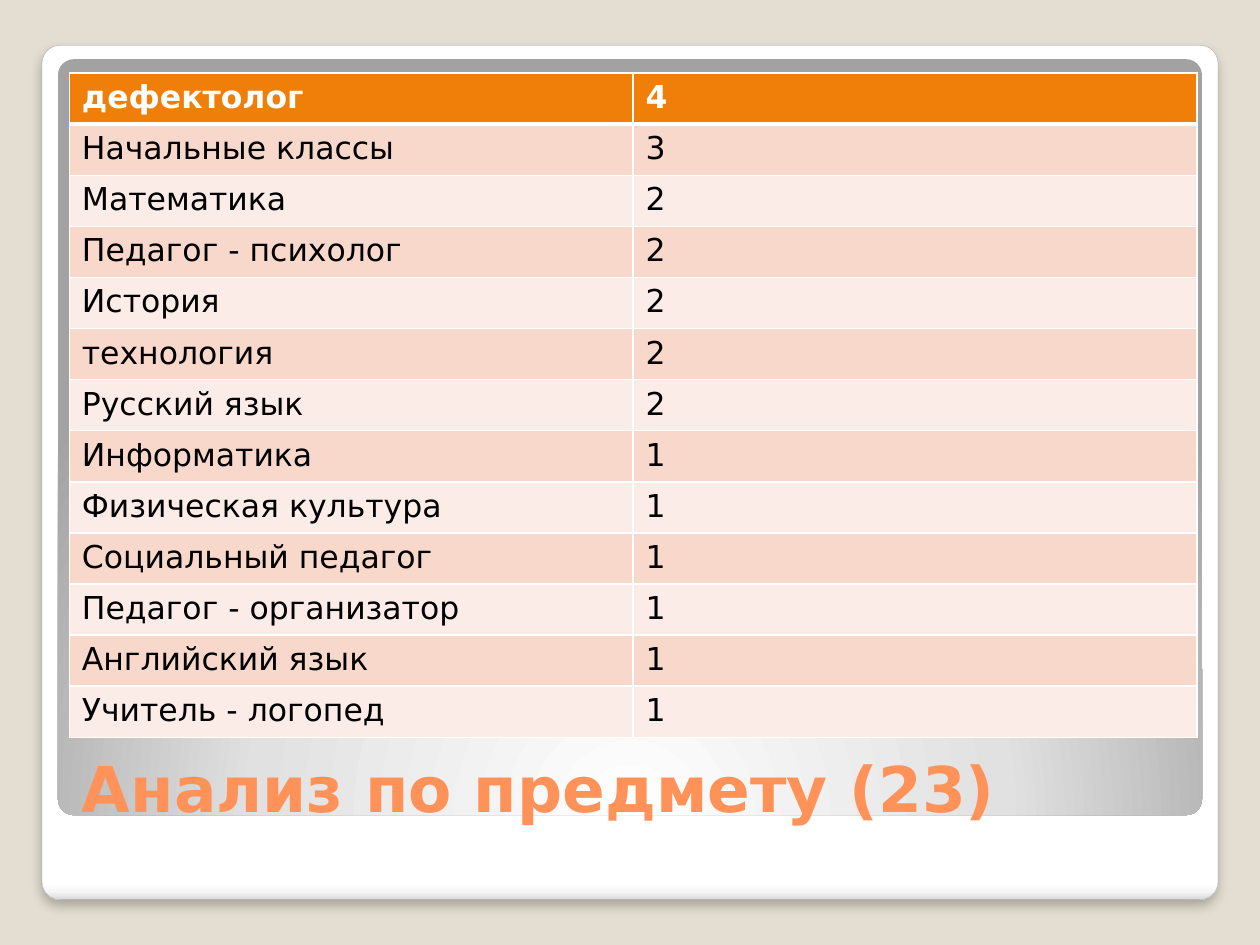
"""Build the slide that counts teachers by subject."""
from lxml import etree
from pptx import Presentation
from pptx.dml.color import RGBColor
from pptx.enum import shapes, text
from pptx.oxml import ns
from pptx.util import Pt

TITLE = "Анализ по предмету (23)"
ROWS = [
    ("дефектолог", 4),
    ("Начальные классы", 3),
    ("Математика", 2),
    ("Педагог - психолог", 2),
    ("История", 2),
    ("технология", 2),
    ("Русский язык", 2),
    ("Информатика", 1),
    ("Физическая культура", 1),
    ("Социальный педагог", 1),
    ("Педагог - организатор", 1),
    ("Английский язык", 1),
    ("Учитель - логопед", 1),
]
FONT = "DejaVu Sans"
HUES = {
    "back": "E3DED1", "edge": "A4A4A4", "title": "FF9258", "head": "F07F09",
    "odd": "F9D8CC", "even": "FCECE7", "white": "FFFFFF", "black": "000000",
}
CARD = [(0, "FFFFFF"), (98, "FFFFFF"), (99, "F7F7F7"), (100, "DADADA")]
PANEL = [(0, "FFFFFF"), (55, "E1E1E1"), (100, "A2A2A2")]
LEFT, WIDE, TOP, HIGH = 39.6, 644.4, 41.76, 29.2


def hue(name):
    return RGBColor.from_string(HUES[name])


def add(root, tag, **attrs):
    node = etree.SubElement(root, ns.qn("a:" + tag))
    for key, val in attrs.items():
        node.set(key, str(val))
    return node


def write(frame, words, size, name, bold):
    run = frame.paragraphs[0].add_run()
    run.text = str(words)
    run.font.name, run.font.size, run.font.bold = FONT, Pt(size), bold
    run.font.color.rgb = hue(name)


def plate(slide, box, stops):
    shape = slide.shapes.add_shape(
        shapes.MSO_SHAPE.ROUNDED_RECTANGLE, *map(Pt, box))
    shape.adjustments[0] = 0.021
    shape.shadow.inherit = False
    shape.fill.solid()
    props = shape._element.spPr
    grad = etree.Element(ns.qn("a:gradFill"), rotWithShape="1")
    marks = add(grad, "gsLst")
    for pos, tone in stops:
        add(add(marks, "gs", pos=pos * 1000), "srgbClr", val=tone)
    props.replace(props.find(ns.qn("a:solidFill")), grad)
    return shape, grad


def border(cell, row):
    props = cell._tc.get_or_add_tcPr()
    for side in "LRTB":
        thick = (row, side) in ((0, "B"), (1, "T"))
        line = add(props, "ln" + side, w=Pt(3 if thick else 1))
        add(add(line, "solidFill"), "srgbClr", val=HUES["white"])


def main():
    deck = Presentation()
    deck.slide_width, deck.slide_height = Pt(720), Pt(540)
    slide = deck.slides.add_slide(deck.slide_layouts[5])
    slide.background.fill.solid()
    slide.background.fill.fore_color.rgb = hue("back")

    card, grad = plate(slide, (24, 25.92, 672, 488.16), CARD)
    add(grad, "lin", ang=5400000, scaled=0)
    card.line.color.rgb, card.line.width = hue("edge"), Pt(0.16)
    glow = add(card._element.spPr.find(ns.qn("a:effectLst")), "outerShdw",
               blurRad=Pt(6), dist=Pt(4), dir=5400000, rotWithShape=0)
    add(add(glow, "srgbClr", val=HUES["black"]), "alpha", val=25000)

    panel, grad = plate(slide, (33.12, 33.84, 653.76, 432), PANEL)
    add(add(grad, "path", path="circle"), "fillToRect",
        l=50000, t=175000, r=50000, b=-75000)
    panel.line.fill.background()

    title = slide.shapes.title
    slide.shapes._spTree.append(title._element)
    title.left, title.top = Pt(LEFT), Pt(392.4)
    title.width, title.height = Pt(WIDE), Pt(82.8)
    frame = title.text_frame
    frame.vertical_anchor = text.MSO_ANCHOR.BOTTOM
    frame.paragraphs[0].alignment = text.PP_ALIGN.LEFT
    write(frame, TITLE, 36, "title", True)

    table = slide.shapes.add_table(
        len(ROWS), 2, Pt(LEFT), Pt(TOP), Pt(WIDE), Pt(HIGH * len(ROWS))).table
    for col in table.columns:
        col.width = Pt(WIDE / 2)
    for i, pair in enumerate(ROWS):
        table.rows[i].height = Pt(HIGH)
        fill = "head" if i == 0 else "odd" if i % 2 else "even"
        for j, words in enumerate(pair):
            cell = table.cell(i, j)
            border(cell, i)
            cell.fill.solid()
            cell.fill.fore_color.rgb = hue(fill)
            write(cell.text_frame, words, 18,
                  "black" if i else "white", i == 0)
    deck.save("out.pptx")


if __name__ == "__main__":
    main()
